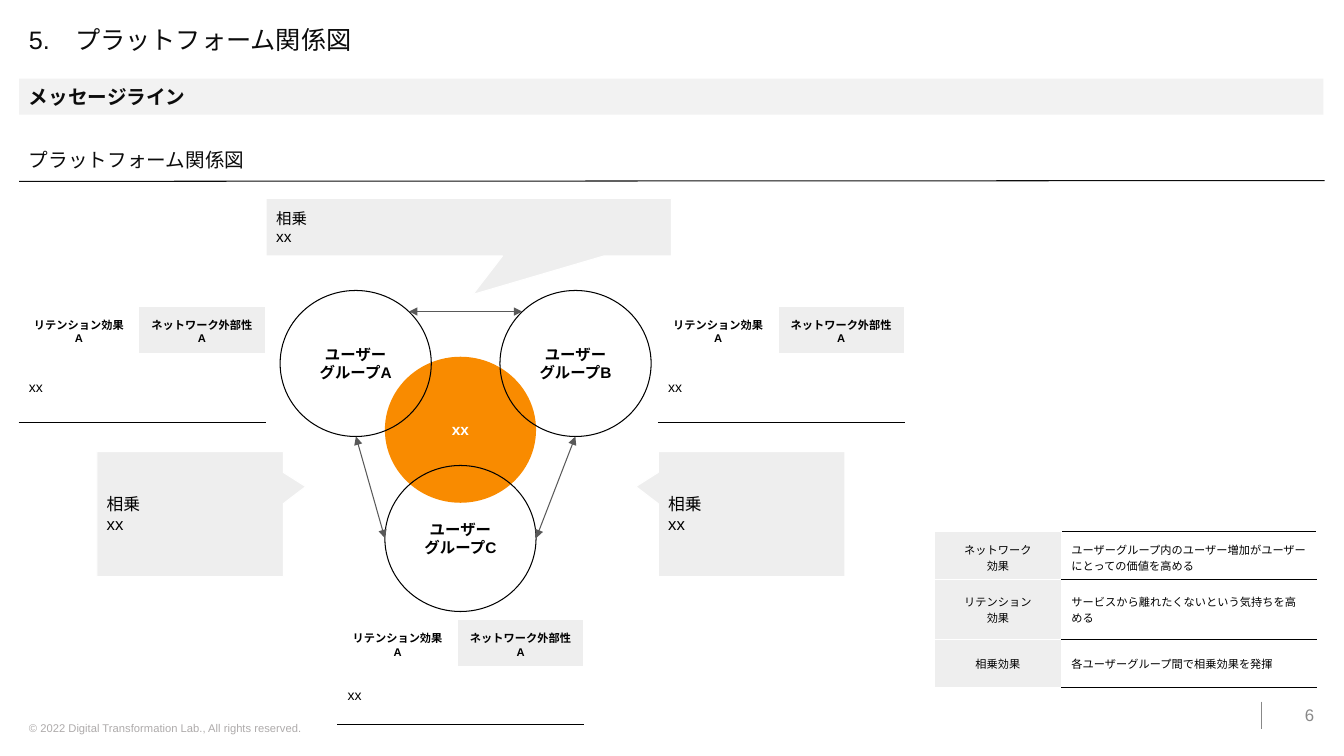
from dataclasses import dataclass

from lxml.etree import SubElement
from pptx import Presentation
from pptx.dml.color import RGBColor
from pptx.enum.shapes import MSO_CONNECTOR as Connector, MSO_SHAPE as Shape
from pptx.enum.text import MSO_ANCHOR as Anchor, PP_ALIGN as Align
from pptx.oxml.ns import qn
from pptx.util import Cm, Pt

COLORS = {
    "ink": "0C0C0C", "black": "000000", "white": "FFFFFF", "orange": "F98B00",
    "band": "F2F2F2", "panel": "EEEEEE", "arrow": "595959",
    "number": "888888", "copyright": "AEABAB",
}
FONT = "Arial"
LEFT = 0.48
INSET = 0.25
THIN = Pt(0.75)


@dataclass(frozen=True)
class Style:
    size: float
    color: str = "black"
    bold: bool = False
    align: Align = Align.LEFT
    anchor: Anchor = Anchor.MIDDLE


@dataclass(frozen=True)
class Box:
    left: float
    top: float
    width: float
    height: float

    def lengths(self) -> tuple:
        return Cm(self.left), Cm(self.top), Cm(self.width), Cm(self.height)


@dataclass(frozen=True)
class Label:
    box: Box
    text: str
    style: Style
    fill: str = ""


@dataclass(frozen=True)
class Circle:
    left: float
    top: float
    text: str
    style: Style
    fill: str = ""
    line: str = ""


@dataclass(frozen=True)
class Callout:
    box: Box
    size: float
    tip: tuple[float, float]


@dataclass(frozen=True)
class Line:
    start: tuple[float, float]
    end: tuple[float, float]
    color: str
    arrows: bool = False


@dataclass(frozen=True)
class EffectTable:
    left: float
    top: float
    rows: tuple[float, float]


def rgb(name: str) -> RGBColor:
    return RGBColor.from_string(COLORS[name])


def write(frame, text: str, style: Style) -> None:
    frame.text = text
    for paragraph in frame.paragraphs:
        paragraph.alignment = style.align
        font = paragraph.font
        font.name, font.size, font.bold = FONT, Pt(style.size), style.bold
        font.color.rgb = rgb(style.color)


def paint(fill, name: str) -> None:
    if name:
        fill.solid()
        fill.fore_color.rgb = rgb(name)
    else:
        fill.background()


def add_label(slide, label: Label) -> None:
    if label.fill:
        holder = add_figure(slide, Shape.RECTANGLE, label.box, label.fill, "")
    else:
        holder = slide.shapes.add_textbox(*label.box.lengths())
    frame = holder.text_frame
    frame.word_wrap = True
    frame.vertical_anchor = label.style.anchor
    write(frame, label.text, label.style)


def add_figure(slide, kind: Shape, box: Box, fill: str, line: str):
    figure = slide.shapes.add_shape(kind, *box.lengths())
    figure.shadow.inherit = False
    paint(figure.fill, fill)
    paint(figure.line.fill, line)
    if line:
        figure.line.width = THIN
    return figure


def fill_figure(figure, text: str, style: Style) -> None:
    frame = figure.text_frame
    frame.word_wrap = True
    frame.vertical_anchor = style.anchor
    frame.margin_left = frame.margin_right = Cm(INSET)
    frame.margin_top = frame.margin_bottom = Cm(INSET)
    write(frame, text, style)


def add_circle(slide, circle: Circle) -> None:
    box = Box(circle.left, circle.top, 3.81, 3.68)
    figure = add_figure(slide, Shape.OVAL, box, circle.fill, circle.line)
    fill_figure(figure, circle.text, circle.style)


def add_callout(slide, callout: Callout) -> None:
    figure = add_figure(slide, Shape.ROUNDED_RECTANGULAR_CALLOUT, callout.box, "panel", "white")
    for index, value in enumerate((*callout.tip, 0)):
        figure.adjustments[index] = value
    fill_figure(figure, "相乗\nxx", Style(callout.size))


def add_line(slide, line: Line) -> None:
    ends = (Cm(value) for value in (*line.start, *line.end))
    connector = slide.shapes.add_connector(Connector.STRAIGHT, *ends)
    connector.line.color.rgb = rgb(line.color)
    connector.line.width = THIN
    properties = connector._element.spPr
    if line.arrows:
        for end in ("a:headEnd", "a:tailEnd"):
            SubElement(properties.find(qn("a:ln")), qn(end), type="triangle")
    SubElement(properties, qn("a:effectLst"))


def add_grid(slide, left: float, top: float, columns: tuple, rows: tuple):
    box = Box(left, top, sum(columns), sum(rows))
    table = slide.shapes.add_table(len(rows), len(columns), *box.lengths()).table
    table.first_row = table.horz_banding = False
    for column, width in zip(table.columns, columns):
        column.width = Cm(width)
    for row, height in zip(table.rows, rows):
        row.height = Cm(height)
    return table


def set_cell(cell, text: str, style: Style, fill: str = "", ruled: str = "") -> None:
    properties = cell._tc.get_or_add_tcPr()
    for side in "LRTB":
        color = "black" if side in ruled else "white"
        border = SubElement(properties, qn(f"a:ln{side}"), w=str(THIN))
        solid = SubElement(border, qn("a:solidFill"))
        SubElement(solid, qn("a:srgbClr"), val=COLORS[color])
    paint(cell.fill, fill)
    cell.margin_left = cell.margin_right = Cm(INSET)
    cell.margin_top = cell.margin_bottom = Cm(INSET)
    cell.vertical_anchor = style.anchor
    write(cell.text_frame, text, style)


def add_effects(slide, effects: EffectTable) -> None:
    table = add_grid(slide, effects.left, effects.top, (3.02, 3.18), effects.rows)
    heading = Style(8, bold=True, align=Align.CENTER, anchor=Anchor.TOP)
    set_cell(table.cell(0, 0), "リテンション効果\nA", heading)
    set_cell(table.cell(0, 1), "ネットワーク外部性\nA", heading, "panel")
    table.cell(1, 0).merge(table.cell(1, 1))
    for column, text in enumerate(("xx", "")):
        set_cell(table.cell(1, column), text, Style(10), ruled="B")


def add_legend(slide) -> None:
    table = add_grid(slide, 23.55, 13.39, (3.2, 6.43), (1.22, 1.5, 1.22))
    for row, (term, meaning) in enumerate(LEGEND):
        set_cell(table.cell(row, 0), term, Style(8, align=Align.CENTER), "panel")
        set_cell(table.cell(row, 1), meaning, Style(8), ruled="TB")


LABELS = (
    Label(Box(LEFT, 18.06, 7.54, 0.61), "© 2022 Digital Transformation Lab., All rights reserved.",
          Style(8, "copyright", anchor=Anchor.TOP)),
    Label(Box(31.8, 17.68, 1.57, 0.66), "6", Style(12, "number", align=Align.RIGHT)),
    Label(Box(LEFT, 0, 33.38, 1.98), "5.　プラットフォーム関係図", Style(18, "ink")),
    Label(Box(LEFT, 1.98, 32.87, 0.91), "メッセージライン", Style(14, "ink", True), "band"),
    Label(Box(LEFT, 3.58, 30.23, 0.91), "プラットフォーム関係図", Style(14, "ink")),
)
GROUP = Style(11, bold=True, align=Align.CENTER)
CIRCLES = (
    Circle(9.7, 8.99, "xx", Style(11, "white", True, Align.CENTER), fill="orange"),
    Circle(7.06, 7.32, "ユーザー\nグループA", GROUP, line="black"),
    Circle(12.6, 7.32, "ユーザー\nグループB", GROUP, line="black"),
    Circle(9.7, 11.73, "ユーザー\nグループC", GROUP, line="black"),
)
LINES = (
    Line((31.8, 17.68), (31.8, 18.36), "number"),
    Line((33.38, 4.55), (LEFT, 4.57), "ink"),
    Line((10.31, 7.85), (13.16, 7.85), "arrow", True),
    Line((13.51, 13.56), (14.5, 11), "arrow", True),
    Line((9.7, 13.56), (8.97, 11), "arrow", True),
)
CALLOUTS = (
    Callout(Box(16.59, 11.38, 4.7, 3.15), 12, (-0.62, -0.22)),
    Callout(Box(2.44, 11.38, 4.7, 3.15), 12, (0.62, -0.22)),
    Callout(Box(6.71, 5, 10.21, 1.45), 11, (0.01, 1.17)),
)
EFFECTS = (
    EffectTable(LEFT, 7.72, (1.14, 1.75)),
    EffectTable(16.59, 7.72, (1.14, 1.75)),
    EffectTable(8.51, 15.62, (1.14, 1.45)),
)
LEGEND = (
    ("ネットワーク\n効果", "ユーザーグループ内のユーザー増加がユーザーにとっての価値を高める"),
    ("リテンション\n効果", "サービスから離れたくないという気持ちを高める"),
    ("相乗効果", "各ユーザーグループ間で相乗効果を発揮"),
)


def main() -> None:
    deck = Presentation()
    deck.slide_width, deck.slide_height = Cm(33.87), Cm(19.05)
    slide = deck.slides.add_slide(deck.slide_layouts[6])
    for draw, parts in ((add_label, LABELS), (add_circle, CIRCLES), (add_line, LINES),
                        (add_callout, CALLOUTS), (add_effects, EFFECTS)):
        for part in parts:
            draw(slide, part)
    add_legend(slide)
    deck.save("out.pptx")


if __name__ == "__main__":
    main()
